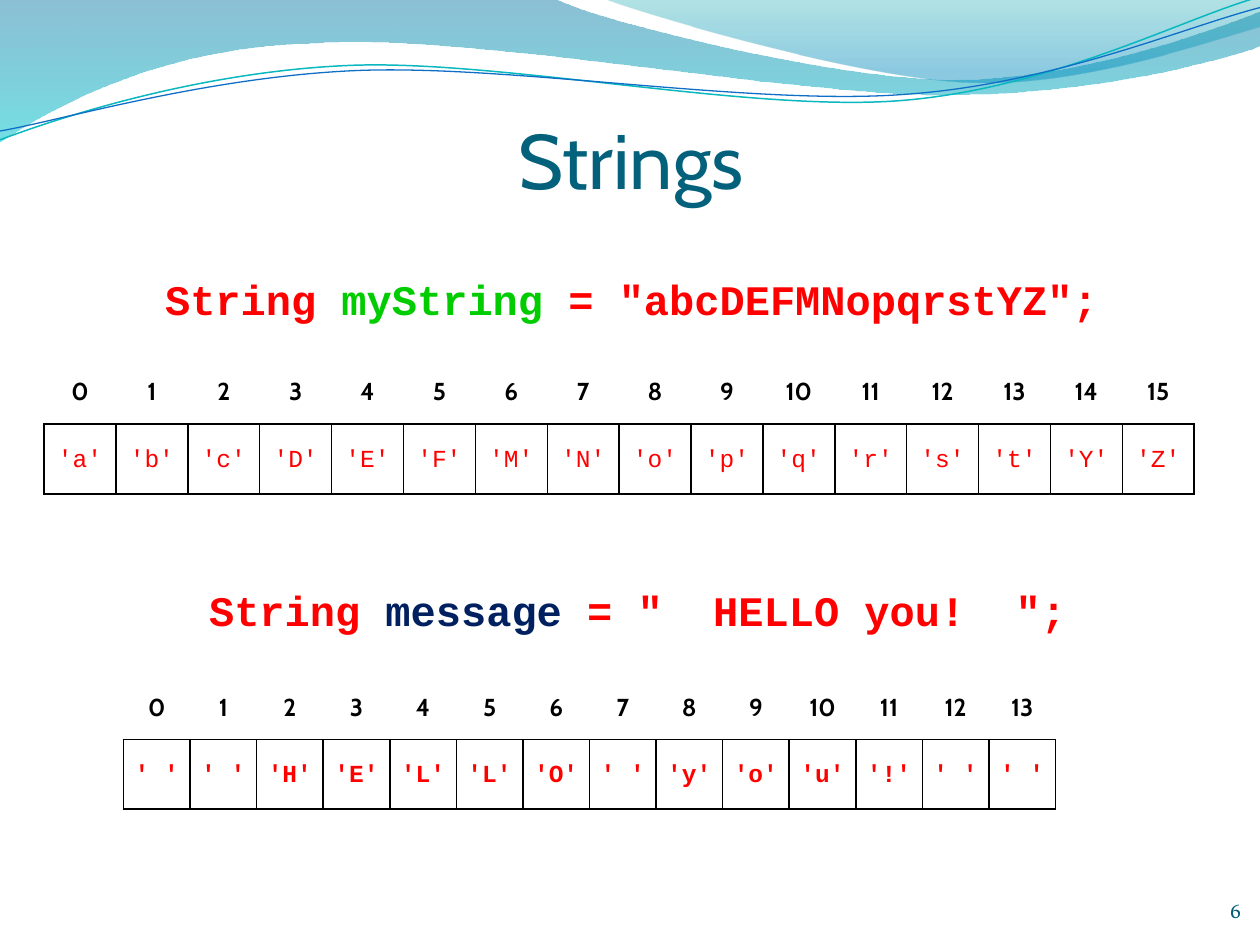
import math

import pptx
import pptx.dml.color
import pptx.enum.text
import pptx.oxml
import pptx.oxml.ns
import pptx.util

Inches = pptx.util.Inches
Pt = pptx.util.Pt
ALIGN = pptx.enum.text.PP_ALIGN
ANCHOR = pptx.enum.text.MSO_ANCHOR
NS = pptx.oxml.ns.nsdecls("a")

HEADING_FONT, CODE_FONT, NUMBER_FONT = "Cabin", "Courier New", "Vollkorn"
RED, GREEN, NAVY = "FF0000", "00CC00", "002060"
BLACK, WHITE = "000000", "FFFFFF"


def color(hex_code):
    return pptx.dml.color.RGBColor.from_string(hex_code)


class SlideBuilder:
    def __init__(self, slide):
        self.slide = slide

    def add_run(self, paragraph, text, size, font, hex_code, bold=False):
        run = paragraph.add_run()
        run.text = text
        run.font.size = Pt(size)
        run.font.name = font
        run.font.bold = bold
        run.font.color.rgb = color(hex_code)

    def curve(self, box, start, segments, closed, rotation=0):
        """Freeform of lines (two numbers) and cubic curves (six numbers)."""
        left, top, width, height = box
        builder = self.slide.shapes.build_freeform(scale=float(Inches(1)))
        builder.add_line_segments([(1, 0), (1, 1)], close=closed)
        shape = builder.convert_to_shape()
        shape.left, shape.top, shape.width, shape.height = map(Inches, box)
        shape.rotation = rotation
        shape.shadow.inherit = False

        # Points are given as seen, so turn them back around the box centre
        turn = math.radians(-rotation)
        center_x, center_y = left + width / 2, top + height / 2

        def point(x, y):
            dx, dy = x - center_x, y - center_y
            local_x = dx * math.cos(turn) - dy * math.sin(turn) + width / 2
            local_y = dx * math.sin(turn) + dy * math.cos(turn) + height / 2
            return f'<a:pt x="{Inches(local_x)}" y="{Inches(local_y)}"/>'

        steps = f"<a:moveTo>{point(*start)}</a:moveTo>"
        for segment in segments:
            tag = "lnTo" if len(segment) == 2 else "cubicBezTo"
            points = "".join(map(point, segment[::2], segment[1::2]))
            steps += f"<a:{tag}>{points}</a:{tag}>"
        steps += "<a:close/>" if closed else ""
        outline = next(shape.element.spPr.iter(pptx.oxml.ns.qn("a:path")))
        outline.getparent().replace(outline, pptx.oxml.parse_xml(
            f'<a:path {NS} w="{Inches(width)}" h="{Inches(height)}">{steps}</a:path>'))
        return shape

    def band(self, box, start, segments, stops):
        """Closed wave with a top-to-bottom gradient of see-through colours."""
        shape = self.curve(box, start, segments, True)
        shape.line.fill.background()
        shape.fill.gradient()
        shape.fill.gradient_angle = 270
        for stop, (position, hex_code, _) in zip(shape.fill.gradient_stops, stops):
            stop.position = position
            stop.color.rgb = color(hex_code)
        tag = pptx.oxml.ns.qn("a:srgbClr")
        for node, (_, _, opacity) in zip(shape.element.spPr.iter(tag), stops):
            node.append(pptx.oxml.parse_xml(
                f'<a:alpha {NS} val="{opacity * 1000}"/>'))

    def ribbon(self, box, start, segments, hex_code, width):
        shape = self.curve(box, start, segments, False, rotation=357.3)
        shape.fill.background()
        shape.line.color.rgb = color(hex_code)
        shape.line.width = Pt(width)

    def text(self, box, lines, size, font, align=ALIGN.CENTER,
             anchor=ANCHOR.BOTTOM, bold=False, margins=(0, 0), indent=0, gap=0):
        frame = self.slide.shapes.add_textbox(*map(Inches, box)).text_frame
        frame.word_wrap = True
        frame.vertical_anchor = anchor
        frame.margin_left = frame.margin_right = Inches(margins[0])
        frame.margin_top = frame.margin_bottom = Inches(margins[1])
        for index, runs in enumerate(lines):
            paragraph = frame.add_paragraph() if index else frame.paragraphs[0]
            paragraph.alignment = align
            paragraph.space_before = Pt(gap if index else 0)
            if indent:
                paragraph._p.get_or_add_pPr().set("marL", str(Inches(indent)))
            for content, hex_code in runs:
                self.add_run(paragraph, content, size, font, hex_code, bold)

    def borders(self, cell, sides):
        properties = cell._tc.get_or_add_tcPr()
        for index, side in enumerate(sides):
            properties.insert(index, pptx.oxml.parse_xml(
                f'<a:ln{side} {NS} w="12700"><a:solidFill>'
                f'<a:srgbClr val="{BLACK}"/></a:solidFill></a:ln{side}>'))

    def index_table(self, box, characters, margins, bold):
        """Index numbers above the boxed characters of a string."""
        left, top, width, height = map(Inches, box)
        count = len(characters)
        table = self.slide.shapes.add_table(
            2, count, left, top, width, height).table
        table.first_row = table.horz_banding = False
        for index, character in enumerate(characters):
            entries = [(str(index), HEADING_FONT, BLACK, True, "B"),
                       (f"'{character}'", CODE_FONT, RED, bold, "LRTB")]
            for level, (content, font, hex_code, weight, sides) in enumerate(entries):
                cell = table.cell(level, index)
                cell.fill.solid()
                cell.fill.fore_color.rgb = color(WHITE)
                cell.vertical_anchor = ANCHOR.MIDDLE
                cell.margin_left = cell.margin_right = Inches(margins[0])
                cell.margin_top = cell.margin_bottom = Inches(margins[1])
                paragraph = cell.text_frame.paragraphs[0]
                paragraph.alignment = ALIGN.CENTER
                paragraph.line_spacing = 1.15
                paragraph.space_before, paragraph.space_after = Pt(3), Pt(6)
                self.add_run(paragraph, content, 14, font, hex_code, weight)
                self.borders(cell, sides)


def main():
    deck = pptx.Presentation()
    deck.slide_width, deck.slide_height = Inches(10), Inches(7.5)
    page = SlideBuilder(deck.slides.add_slide(deck.slide_layouts[6]))

    # Wave across the top
    page.band((-0.01, -0.01, 10.02, 1.14), (0, 0), [
        (4.4, -0.01), (4.76, 0.17, 6.64, 0.63, 7.58, 0.63),
        (8.53, 0.63, 9.58, 0.26, 10, 0.09), (10.01, 0.36),
        (9.83, 0.44, 8.7, 0.76, 7.46, 0.75),
        (6.22, 0.75, 3.82, 0.28, 2.57, 0.34),
        (1.29, 0.36, 0.46, 0.83, -0.01, 1.13), (0, 0)],
        [(0, "0074A1", 45), (1, "00C6CF", 55)])
    page.band((4.79, -0.01, 5.21, 0.7), (4.79, -0.01), [
        (5.09, 0.11, 6.82, 0.62, 7.69, 0.65),
        (8.56, 0.69, 9.61, 0.32, 10, 0.21), (10, 0), (4.79, -0.01)],
        [(0, "00A1A9", 30), (0.8, "008BBF", 45)])
    page.ribbon((-0.02, 0.22, 10.02, 0.71), (0, 1.11), [
        (0.48, 0.93, 1.58, 0.57, 2.77, 0.52),
        (3.95, 0.47, 5.93, 0.89, 7.13, 0.8),
        (8.33, 0.71, 9.38, 0.15, 9.98, -0.02)], "0AB8BF", 0.85)
    page.ribbon((-0.02, 0.3, 10.03, 0.58), (0, 1.04), [
        (0.47, 0.96, 1.64, 0.61, 2.83, 0.56),
        (4.03, 0.51, 5.97, 0.84, 7.17, 0.75),
        (8.36, 0.67, 9.41, 0.21, 10, 0.06)], "0F6FC6", 0.75)

    # Slide number and title
    page.text((9.02, 6.92, 0.83, 0.4), [[("6", "045D75")]], 12, NUMBER_FONT,
              align=ALIGN.RIGHT)
    page.text((0.51, 0.84, 9, 0.79), [[("Strings", "04617B")]], 44.1, HEADING_FONT)

    # Declarations
    declarations = [
        [("String ", RED), ("myString", GREEN), (' = "abcDEFMNopqrstYZ";\t', RED)],
        [("String ", RED), ("message", NAVY), (' = "  HELLO you!  ";', RED)]]
    page.text((0.5, 2.12, 9, 4.8), declarations, 24, CODE_FONT, anchor=ANCHOR.TOP,
              bold=True, margins=(0.1, 0.05), indent=0.12, gap=149)

    # Characters by index
    page.index_table((0.35, 2.81, 9.13, 1.11), "abcDEFMNopqrstYZ", (0.1, 0.05), False)
    page.index_table((0.98, 5.32, 7.4, 1.1), "  HELLO you!  ", (0.07, 0), True)

    deck.save("out.pptx")


if __name__ == "__main__":
    main()
